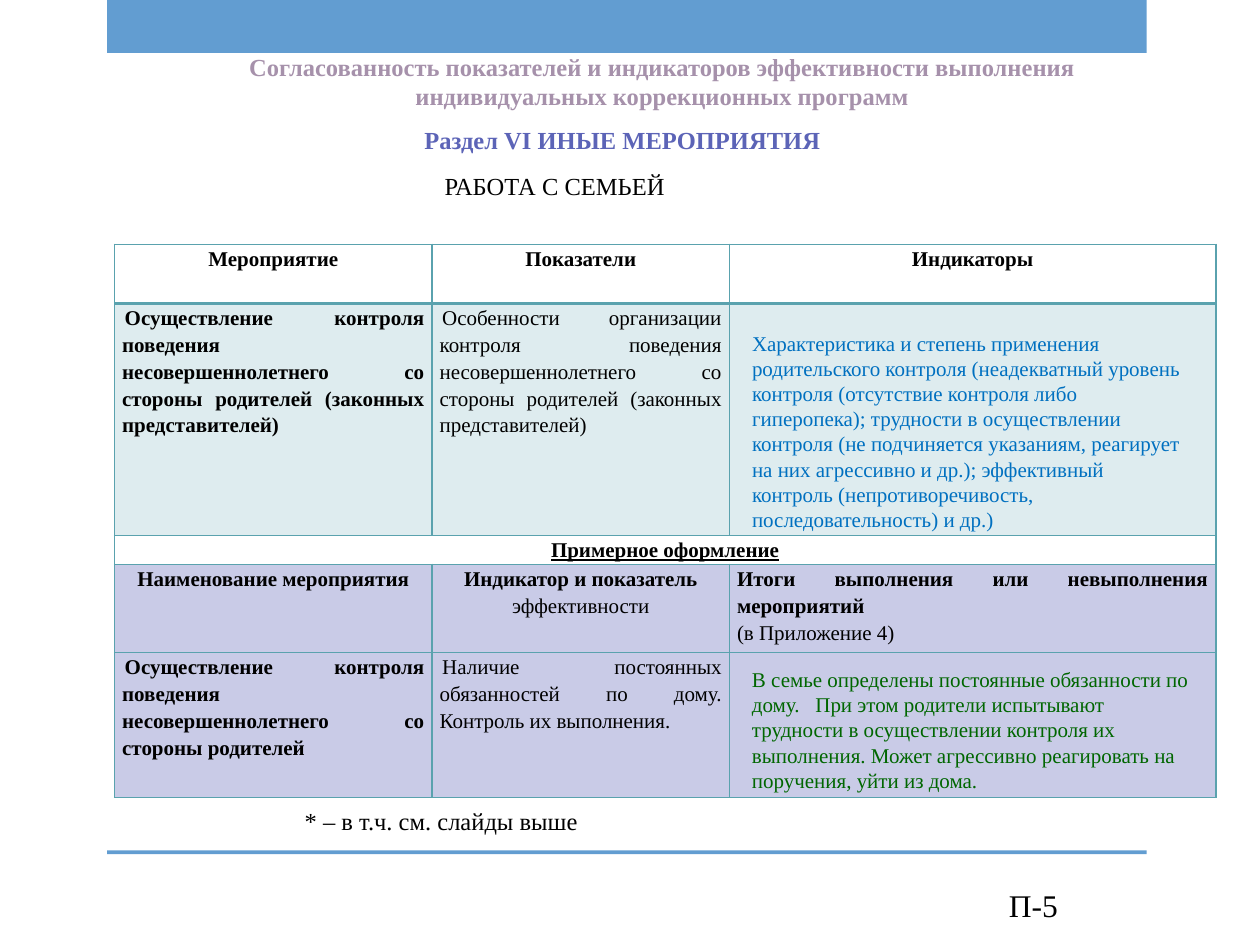
from dataclasses import dataclass

from lxml import etree
from pptx import Presentation
from pptx.dml.color import RGBColor
from pptx.enum.shapes import MSO_SHAPE
from pptx.enum.text import MSO_ANCHOR, MSO_AUTO_SIZE, PP_ALIGN
from pptx.oxml.ns import qn
from pptx.util import Inches, Pt

LEFT, MID, JUST = PP_ALIGN.LEFT, PP_ALIGN.CENTER, PP_ALIGN.JUSTIFY
TOP, NO_FIT, RECT = MSO_ANCHOR.TOP, MSO_AUTO_SIZE.NONE, MSO_SHAPE.RECTANGLE


@dataclass(frozen=True)
class Theme:
    font: str = "Times New Roman"
    ink: str = "000000"
    bar: str = "629DD1"
    title: str = "A691AB"
    violet: str = "5C64B7"
    blue: str = "0070C0"
    green: str = "006600"
    grid: str = "5AA2AE"
    mint: str = "DEECEF"
    lilac: str = "C9CBE7"
    small: int = 12
    body: int = 14
    large: int = 18


T = Theme()


def write(frame, text, size=T.body, color=T.ink, bold=False, line=False,
          align=LEFT, space=None, indent=0):
    """Fill a frame: newline starts a paragraph, | switches bold off."""
    for i, words in enumerate(text.split("\n")):
        para = frame.paragraphs[0] if i == 0 else frame.add_paragraph()
        para.alignment = align
        if space:
            para.line_spacing = space
        if indent:
            para._p.get_or_add_pPr().set("indent", str(Inches(indent)))
        for j, piece in enumerate(words.split("|")):
            if not piece:
                continue
            run = para.add_run()
            run.text = piece
            font = run.font
            font.name, font.size = T.font, Pt(size)
            font.bold, font.underline = bold and j == 0, line
            font.color.rgb = RGBColor.from_string(color)


def edge(cell, side, width):
    """Draw one border of a cell."""
    line = etree.SubElement(cell._tc.get_or_add_tcPr(), qn("a:" + side),
                            w=str(Pt(width)))
    fill = etree.SubElement(line, qn("a:solidFill"))
    etree.SubElement(fill, qn("a:srgbClr"), val=T.grid)


deck = Presentation()
deck.slide_width, deck.slide_height = Inches(10), Inches(7.5)
slide = deck.slides.add_slide(deck.slide_layouts[5])

# Bars at the top and bottom
for top, high in ((0, 0.42), (6.75, 0.03)):
    bar = slide.shapes.add_shape(RECT, Inches(0.85), Inches(top),
                                 Inches(8.25), Inches(high))
    bar.shadow.inherit = False
    bar.fill.solid()
    bar.fill.fore_color.rgb = RGBColor.from_string(T.bar)
    bar.line.fill.background()

# Title
title = slide.shapes.title
title.left, title.top = Inches(0.83), Inches(0.36)
title.width, title.height = Inches(8.9), Inches(0.57)
frame = title.text_frame
frame.word_wrap, frame.auto_size, frame.vertical_anchor = True, NO_FIT, TOP
write(frame, "Согласованность показателей и индикаторов эффективности выполнения \n"
      "индивидуальных коррекционных программ ",
      color=T.title, bold=True, align=MID)

# Table
cols = (2.52, 2.36, 3.86)
rows = (0.47, 1.84, 0.23, 0.7, 1.15)
fills = (None, T.mint, None, T.lilac, T.lilac)
head = dict(bold=True, align=MID)
lead = dict(bold=True, align=JUST, indent=0.02)
plain = dict(align=JUST, indent=0.02)
cells = (
    (("Мероприятие", head), ("Показатели", head), ("Индикаторы", head)),
    (("Осуществление контроля поведения несовершеннолетнего со стороны "
      "родителей (законных представителей)", lead),
     ("Особенности организации контроля поведения несовершеннолетнего со "
      "стороны родителей (законных представителей)", plain), None),
    (("Примерное оформление", dict(head, line=True)), None, None),
    (("Наименование мероприятия", head),
     ("Индикатор и показатель |эффективности", head),
     ("Итоги выполнения или невыполнения мероприятий\n|(в Приложение 4)",
      dict(bold=True, align=JUST))),
    (("Осуществление контроля поведения несовершеннолетнего со стороны "
      "родителей", lead),
     ("Наличие постоянных обязанностей по дому. Контроль их выполнения.",
      plain), None),
)
table = slide.shapes.add_table(len(rows), len(cols), Inches(0.91), Inches(1.94),
                               Inches(sum(cols)), Inches(sum(rows))).table
table.first_row = table.horz_banding = False
for col, wide in zip(table.columns, cols):
    col.width = Inches(wide)
for row, high in zip(table.rows, rows):
    row.height = Inches(high)
table.cell(2, 0).merge(table.cell(2, 2))

for r, line in enumerate(cells):
    for c, item in enumerate(line):
        cell = table.cell(r, c)
        cell.margin_left = cell.margin_right = Inches(0.06)
        cell.margin_top = cell.margin_bottom = 0
        for side in ("lnL", "lnR", "lnT", "lnB"):
            thick = (r, side) in ((0, "lnB"), (1, "lnT"))
            edge(cell, side, 2 if thick else 1)
        if fills[r]:
            cell.fill.solid()
            cell.fill.fore_color.rgb = RGBColor.from_string(fills[r])
        else:
            cell.fill.background()
        if item:
            write(cell.text_frame, item[0], size=T.small, space=1.15, **item[1])

# Headings, indicator texts and notes
notes = (
    (3.27, 0.94, 3.36, 0.34, "Раздел VI ИНЫЕ МЕРОПРИЯТИЯ",
     dict(color=T.violet, bold=True)),
    (3.43, 1.31, 2.44, 0.34, "РАБОТА С СЕМЬЕЙ", {}),
    (2.32, 6.35, 3.07, 0.34, "* – в т.ч. см. слайды выше", {}),
    (5.87, 2.57, 3.62, 1.72,
     "Характеристика и степень применения родительского контроля "
     "(неадекватный уровень контроля (отсутствие контроля либо гиперопека); "
     "трудности в осуществлении контроля (не подчиняется указаниям, реагирует "
     "на них агрессивно и др.); эффективный контроль (непротиворечивость, "
     "последовательность) и др.)", dict(size=T.small, color=T.blue)),
    (5.87, 5.24, 3.7, 1.11,
     "В семье определены постоянные обязанности по дому.   При этом родители "
     "испытывают трудности в осуществлении контроля их выполнения. Может "
     "агрессивно реагировать на поручения, уйти из дома.",
     dict(size=T.small, color=T.green)),
    (7.91, 6.98, 0.63, 0.4, "П-5", dict(size=T.large)),
)
for x, y, wide, high, text, look in notes:
    box = slide.shapes.add_textbox(Inches(x), Inches(y), Inches(wide), Inches(high))
    box.text_frame.word_wrap = True
    write(box.text_frame, text, **look)

deck.save("out.pptx")
